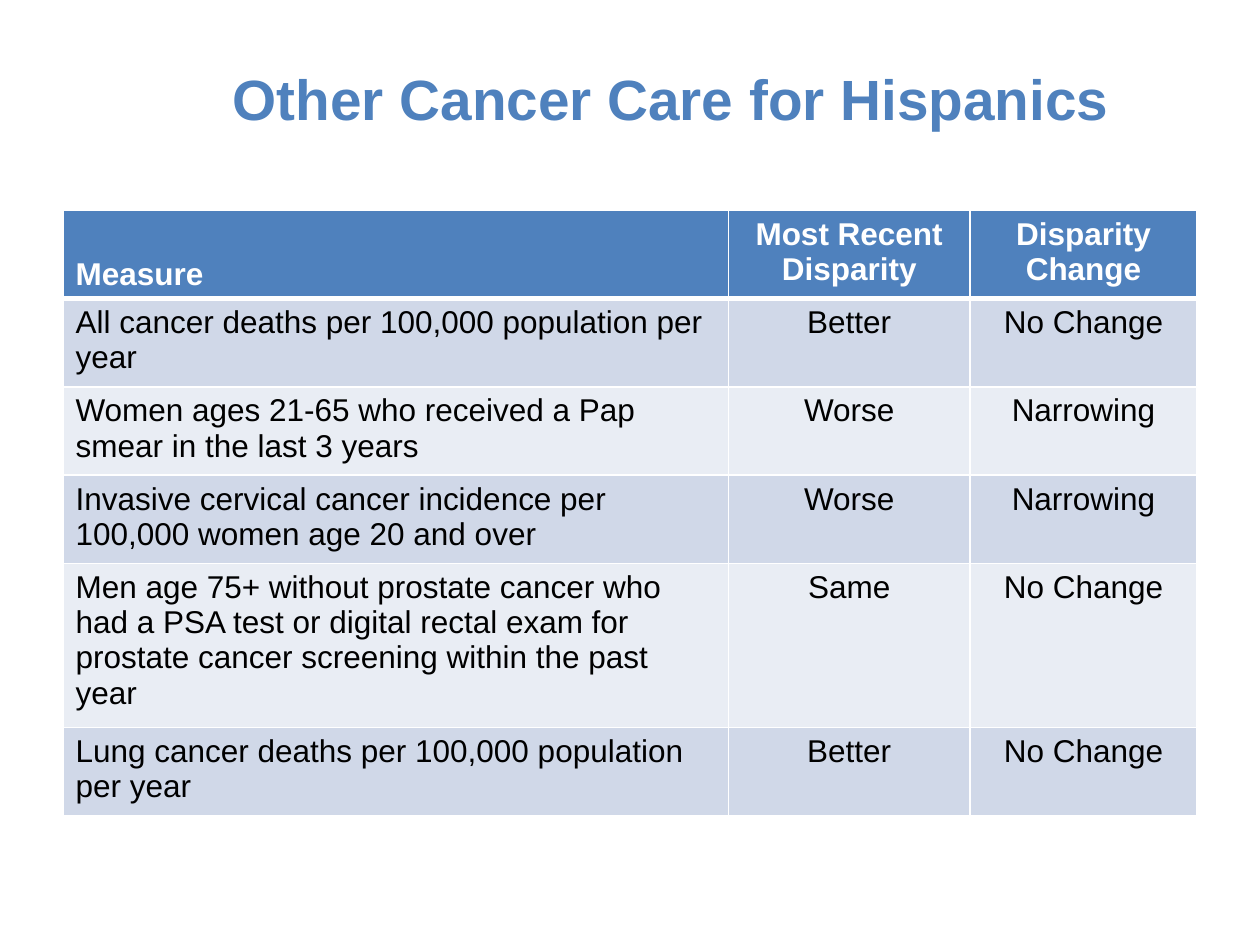
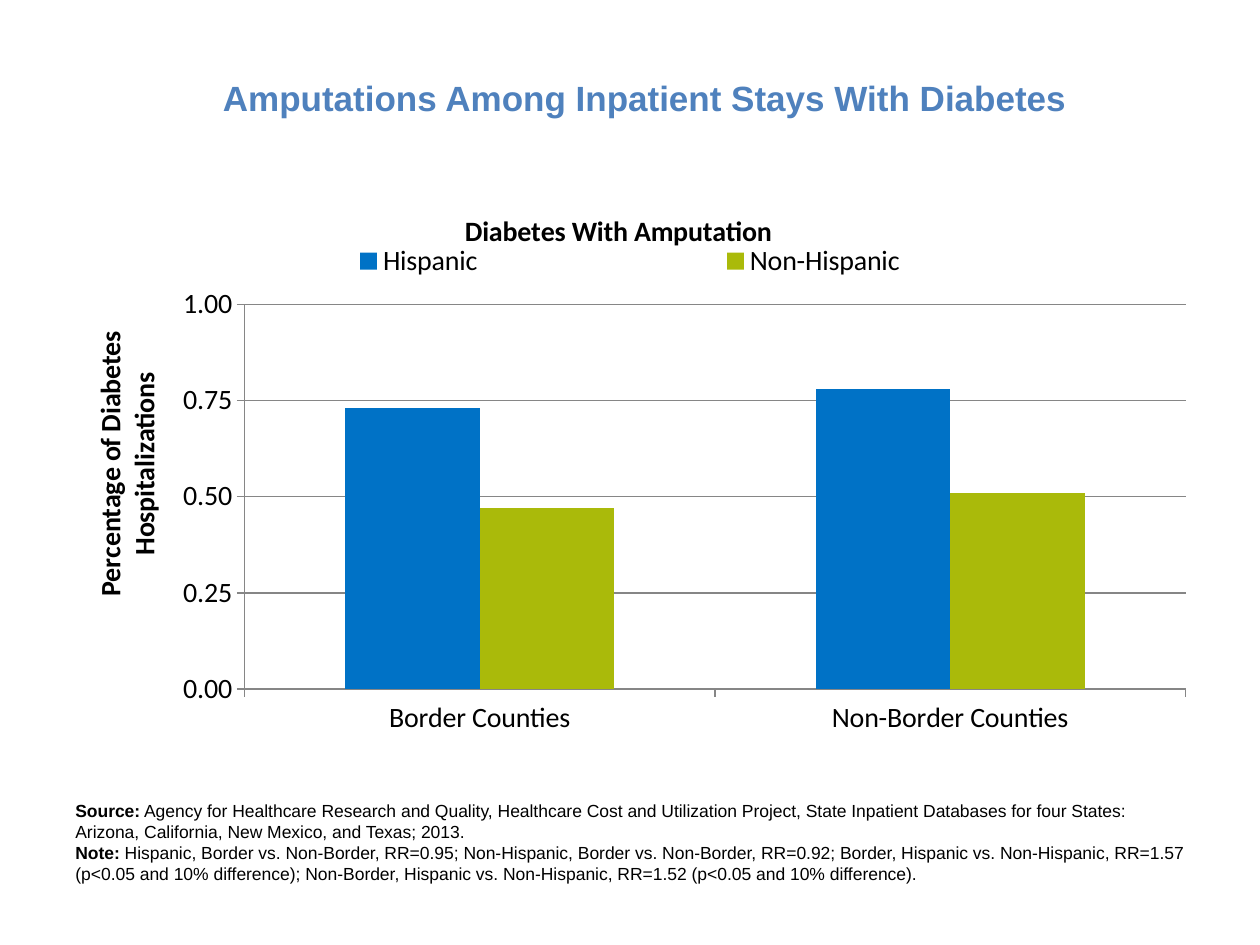
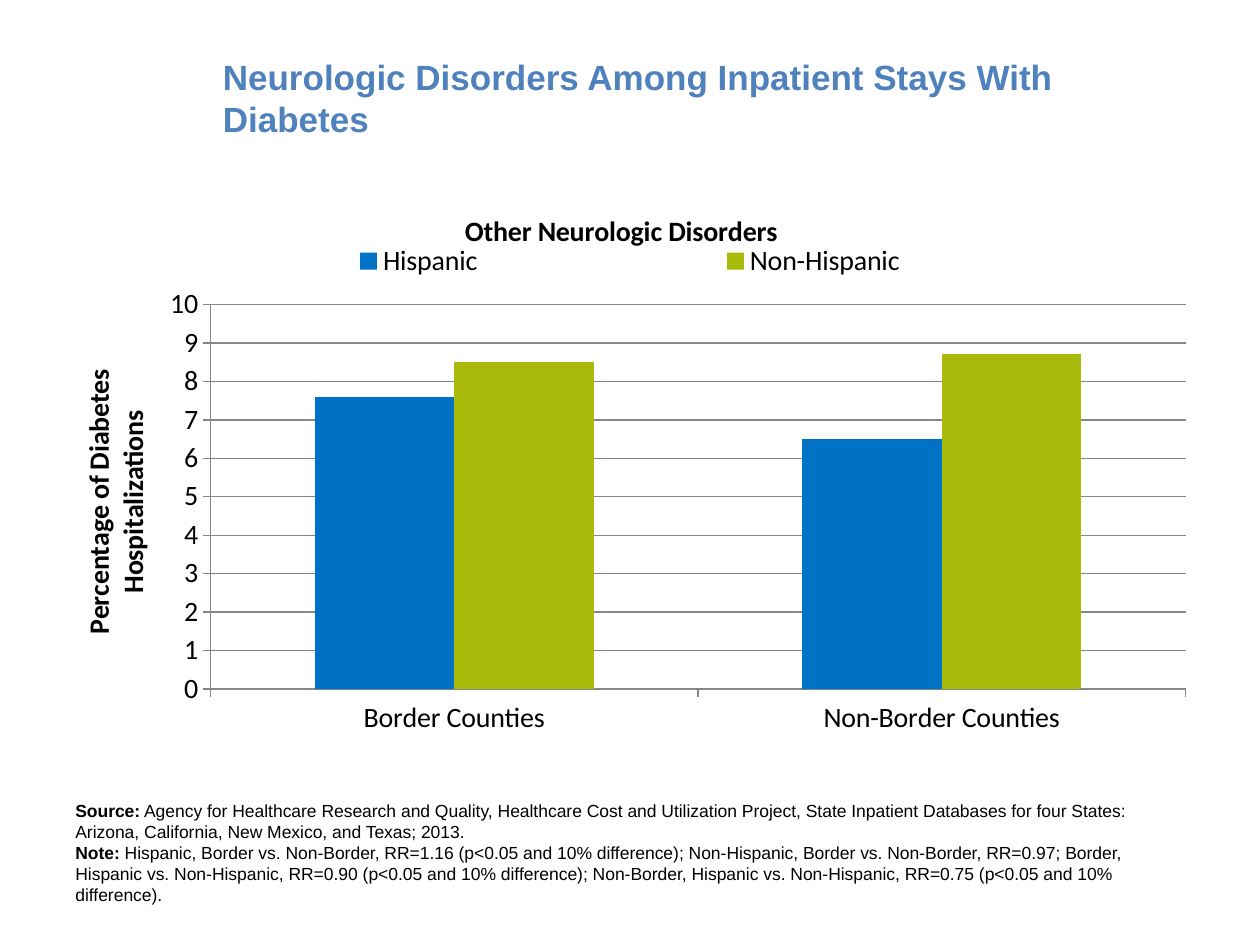
from dataclasses import dataclass

from lxml import etree
from pptx import Presentation
from pptx import util as u
from pptx.chart import data as cd
from pptx.dml import color as dml
from pptx.enum import chart as ec
from pptx.enum import text as et
from pptx.oxml import ns

PX = 9144
COLORS = {
    "blue": "4F81BD", "white": "FFFFFF", "black": "000000", "odd": "D0D8E8",
    "even": "E9EDF4", "grid": "868686", "Hispanic": "0072C6", "Non-Hispanic": "AABA0A",
}
COUNTIES = ["Border Counties", "Non-Border Counties"]
Y_TITLE = "Percentage of Diabetes Hospitalizations"
SOURCE = (
    " Agency for Healthcare Research and Quality, Healthcare Cost and Utilization Project, "
    "State Inpatient Databases for four States: Arizona, California, New Mexico, and Texas; 2013."
)
COLUMNS = [528, 192, 180]
HEADER = ("Measure", "Most Recent Disparity", "Disparity Change")
MEASURES = [
    ("All cancer deaths per 100,000 population per year", "Better", "No Change"),
    ("Women ages 21-65 who received a Pap smear in the last 3 years", "Worse", "Narrowing"),
    ("Invasive cervical cancer incidence per 100,000 women age 20 and over", "Worse", "Narrowing"),
    ("Men age 75+ without prostate cancer who had a PSA test or digital rectal exam for "
     "prostate cancer screening within the past year", "Same", "No Change"),
    ("Lung cancer deaths per 100,000 population per year", "Better", "No Change"),
]


@dataclass(frozen=True)
class Box:
    x: int
    y: int
    w: int
    h: int

    def emu(self) -> tuple[int, ...]:
        return tuple(n * PX for n in (self.x, self.y, self.w, self.h))


@dataclass(frozen=True)
class ChartSlide:
    title: str
    chart_title: str
    values: dict[str, tuple[float, float]]
    top: float
    step: float
    number_format: str
    plot: tuple[float, ...]
    y_title: tuple[float, float]
    note: str
    note_height: int


CHART_SLIDES = [
    ChartSlide(
        "Amputations Among Inpatient Stays With Diabetes", "Diabetes With Amputation",
        {"Hispanic": (0.73, 0.78), "Non-Hispanic": (0.47, 0.51)}, 1, 0.25, "#,##0.00",
        (0.16, 0.19, 0.83, 0.71), (0.02, 0.23),
        "Hispanic, Border vs. Non-Border, RR=0.95; Non-Hispanic, Border vs. Non-Border, RR=0.92; "
        "Border, Hispanic vs. Non-Hispanic, RR=1.57 (p<0.05 and 10% difference); Non-Border, "
        "Hispanic vs. Non-Hispanic, RR=1.52 (p<0.05 and 10% difference).", 77),
    ChartSlide(
        "Neurologic Disorders Among Inpatient Stays With Diabetes", "Other Neurologic Disorders",
        {"Hispanic": (7.6, 6.5), "Non-Hispanic": (8.5, 8.7)}, 10, 1, "#,##0",
        (0.13, 0.19, 0.86, 0.71), (0.01, 0.3),
        "Hispanic, Border vs. Non-Border, RR=1.16 (p<0.05 and 10% difference); Non-Hispanic, "
        "Border vs. Non-Border, RR=0.97; Border, Hispanic vs. Non-Hispanic, RR=0.90 (p<0.05 and "
        "10% difference); Non-Border, Hispanic vs. Non-Hispanic, RR=0.75 (p<0.05 and 10% "
        "difference).", 94),
]


def rgb(name: str) -> dml.RGBColor:
    return dml.RGBColor.from_string(COLORS[name])


def style(font, size: float, color: str = "black", bold: bool = False, name: str = "Arial") -> None:
    font.size, font.bold, font.name = u.Pt(size), bold, name
    font.color.rgb = rgb(color)


def write(p, content: str, align=None, **fmt) -> None:
    r = p.add_run()
    r.text = content
    style(r.font, **fmt)
    if align is not None:
        p.alignment = align


def add_box(s, box: Box, anchor=et.MSO_ANCHOR.TOP):
    tf = s.shapes.add_textbox(*box.emu()).text_frame
    tf.word_wrap = True
    tf.vertical_anchor = anchor
    return tf


def add_title(s, title: str, box: Box, size: float) -> None:
    tf = add_box(s, box, et.MSO_ANCHOR.MIDDLE)
    write(tf.paragraphs[0], title, size=size, color="blue", bold=True)


def set_borders(cell, bottom: int) -> None:
    tc_pr = cell._tc.get_or_add_tcPr()
    for i, (side, width) in enumerate((("L", 1), ("R", 1), ("T", 1), ("B", bottom))):
        ln = etree.Element(ns.qn(f"a:ln{side}"), w=str(u.Pt(width)))
        fill = etree.SubElement(ln, ns.qn("a:solidFill"))
        etree.SubElement(fill, ns.qn("a:srgbClr"), val=COLORS["white"])
        tc_pr.insert(i, ln)


def add_measures(s, box: Box) -> None:
    rows = [HEADER, *MEASURES]
    tbl = s.shapes.add_table(len(rows), len(COLUMNS), *box.emu()).table
    for col, width in zip(tbl.columns, COLUMNS):
        col.width = width * PX
    for i, row in enumerate(rows):
        head = i == 0
        tbl.rows[i].height = (122 if len(row[0]) > 100 else 65) * PX
        for j, content in enumerate(row):
            cell = tbl.cell(i, j)
            cell.fill.solid()
            cell.fill.fore_color.rgb = rgb("blue" if head else "odd" if i % 2 else "even")
            cell.vertical_anchor = et.MSO_ANCHOR.BOTTOM if head and j == 0 else et.MSO_ANCHOR.TOP
            write(cell.text_frame.paragraphs[0], content, size=18, bold=head,
                  color="white" if head else "black",
                  align=et.PP_ALIGN.CENTER if j else et.PP_ALIGN.LEFT)
            set_borders(cell, 3 if head else 1)


def place(el, index: int, *numbers: float, inner: bool = False) -> None:
    for old in el.findall(ns.qn("c:layout")):
        el.remove(old)
    layout = etree.Element(ns.qn("c:layout"))
    manual = etree.SubElement(layout, ns.qn("c:manualLayout"))
    if inner:
        etree.SubElement(manual, ns.qn("c:layoutTarget"), val="inner")
    for axis in "xy":
        etree.SubElement(manual, ns.qn(f"c:{axis}Mode"), val="edge")
    for key, n in zip("xywh", numbers):
        etree.SubElement(manual, ns.qn(f"c:{key}"), val=str(n))
    el.insert(index, layout)


def add_columns(s, spec: ChartSlide, box: Box) -> None:
    data = cd.CategoryChartData()
    data.categories = COUNTIES
    for name, values in spec.values.items():
        data.add_series(name, values)
    chart = s.shapes.add_chart(ec.XL_CHART_TYPE.COLUMN_CLUSTERED, *box.emu(), data).chart
    style(chart.font, 16, name="Calibri")
    plot = chart.plots[0]
    plot.vary_by_categories = False
    plot.gap_width, plot.overlap = 150, 0
    for ser in plot.series:
        ser.format.fill.solid()
        ser.format.fill.fore_color.rgb = rgb(ser.name)

    val, cat = chart.value_axis, chart.category_axis
    val.minimum_scale, val.maximum_scale, val.major_unit = 0, spec.top, spec.step
    val.has_major_gridlines = True
    val.tick_labels.number_format = spec.number_format
    val.tick_labels.number_format_is_linked = False
    for axis in (val, cat):
        axis.major_tick_mark = ec.XL_TICK_MARK.OUTSIDE
        style(axis.tick_labels.font, 16, name="Calibri")
    for lined in (val, cat, val.major_gridlines):
        lined.format.line.color.rgb = rgb("grid")
        lined.format.line.width = u.Pt(0.75)

    for title, content, spot in (
        (chart.chart_title, spec.chart_title, (0.35, 0.01)),
        (val.axis_title, Y_TITLE, spec.y_title),
    ):
        tf = title.text_frame
        write(tf.paragraphs[0], content, size=16, bold=True, name="Calibri")
        place(title._element, 1, *spot)
    tf._txBody.bodyPr.set("rot", "-5400000")
    tf._txBody.bodyPr.set("vert", "horz")

    chart.has_legend = True
    legend = chart.legend
    legend.position = ec.XL_LEGEND_POSITION.TOP
    legend.include_in_layout = False
    style(legend.font, 16, name="Calibri")
    place(legend._element, 1, 0.05, 0.07, 0.9, 0.08)
    place(chart._chartSpace.chart.plotArea, 0, *spec.plot, inner=True)


def add_notes(s, spec: ChartSlide) -> None:
    tf = add_box(s, Box(50, 630, 900, spec.note_height))
    for p, label, content in (
        (tf.paragraphs[0], "Source:", SOURCE),
        (tf.add_paragraph(), "Note: ", spec.note),
    ):
        write(p, label, size=10, bold=True)
        write(p, content, size=10)


def main() -> None:
    prs = Presentation()
    prs.slide_width, prs.slide_height = 1000 * PX, 750 * PX
    blank = prs.slide_layouts[6]

    s = prs.slides.add_slide(blank)
    add_title(s, "Other Cancer Care for Hispanics", Box(175, 30, 775, 95), 32.4)
    add_measures(s, Box(50, 167, 900, 450))

    for spec in CHART_SLIDES:
        s = prs.slides.add_slide(blank)
        add_title(s, spec.title, Box(167, 30, 742, 95), 20)
        add_notes(s, spec)
        add_columns(s, spec, Box(50, 160, 900, 430))
    prs.save("out.pptx")


if __name__ == "__main__":
    main()
